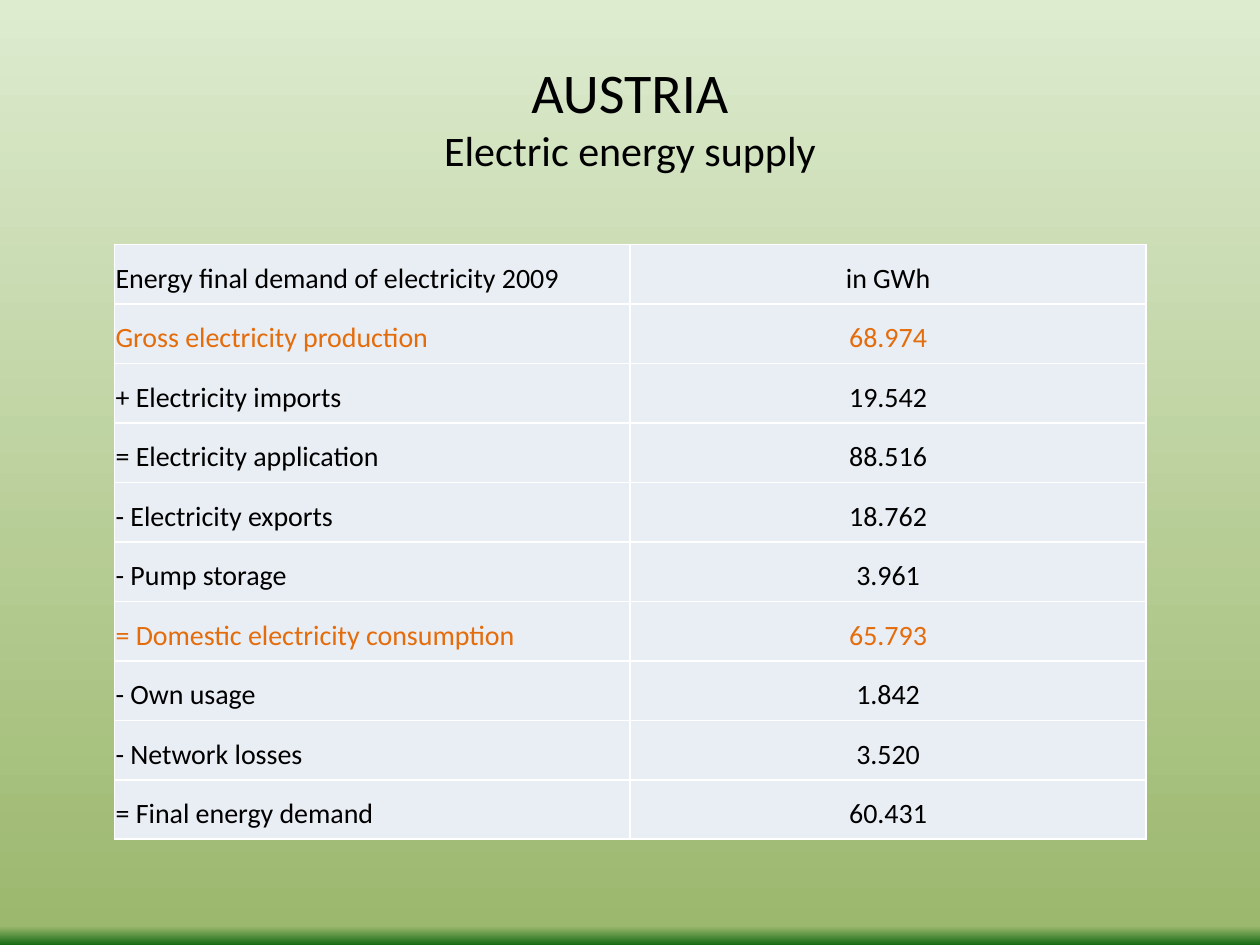
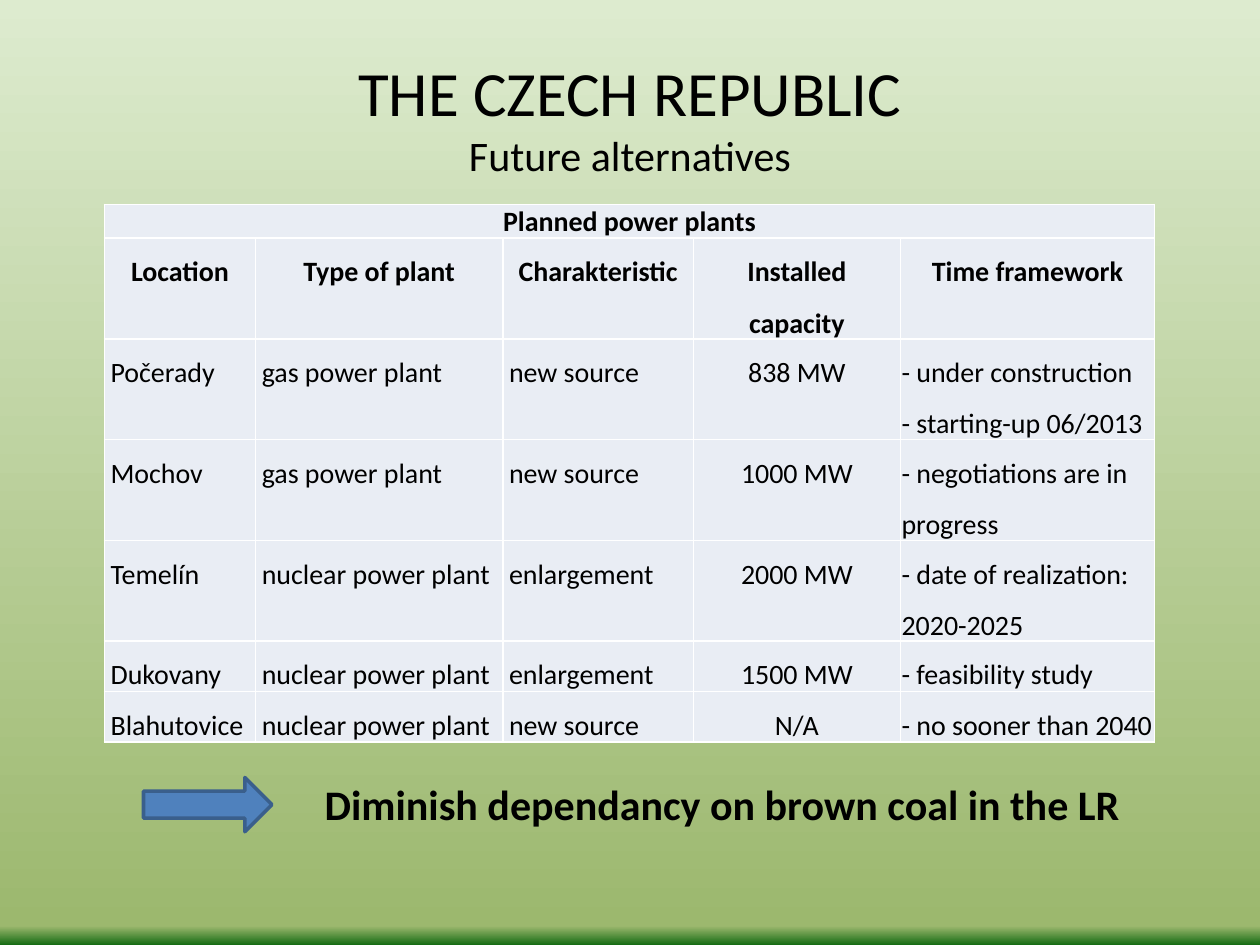
"""Build two slides on electricity supply in Austria and the Czech Republic."""
from copy import deepcopy

from lxml import etree
from pptx import Presentation
from pptx.dml.color import RGBColor
from pptx.enum.shapes import MSO_SHAPE
from pptx.enum.text import MSO_ANCHOR, MSO_AUTO_SIZE, PP_ALIGN
from pptx.oxml.ns import qn
from pptx.util import Pt

LEFT, MID = PP_ALIGN.LEFT, PP_ALIGN.CENTER
MIDDLE = MSO_ANCHOR.MIDDLE
GROW = MSO_AUTO_SIZE.SHAPE_TO_FIT_TEXT
ARROW = MSO_SHAPE.RIGHT_ARROW
FONT = "Calibri"
COLORS = {"text": "000000", "hot": "E46C0A", "cell": "E9EDF4", "rule": "FFFFFF",
          "arrow": "4F81BD", "edge": "3A5F8C"}
FADE = [(0, "DDEBCF"), (0.98, "9CB86E"), (1, "156B13")]
HEAD = (36, 21.6, 648, 90)
SUPPLY = [
    ("Energy final demand of electricity 2009", "in GWh"),
    ("Gross electricity production", "68.974"),
    ("+ Electricity imports", "19.542"),
    ("= Electricity application", "88.516"),
    ("- Electricity exports", "18.762"),
    ("- Pump storage", "3.961"),
    ("= Domestic electricity consumption", "65.793"),
    ("- Own usage", "1.842"),
    ("- Network losses", "3.520"),
    ("= Final energy demand", "60.431"),
]
PLANTS = [
    ("Planned power plants", "", "", "", ""),
    ("Location", "Type of plant", "Charakteristic", "Installed capacity",
     "Time framework"),
    ("Počerady", "gas power plant", "new source", "838 MW",
     "- under construction\n- starting-up 06/2013"),
    ("Mochov", "gas power plant", "new source", "1000 MW",
     "- negotiations are in progress"),
    ("Temelín", "nuclear power plant", "enlargement", "2000 MW",
     "- date of realization: 2020-2025"),
    ("Dukovany", "nuclear power plant", "enlargement", "1500 MW",
     "- feasibility study"),
    ("Blahutovice", "nuclear power plant", "new source", "N/A",
     "- no sooner than 2040"),
]


def style(font, size, color="text", bold=False):
    """Set the face, size, colour and weight of a font."""
    font.name, font.size, font.bold = FONT, Pt(size), bold
    font.color.rgb = RGBColor.from_string(COLORS[color])


def text_box(slide, box):
    """Add a wrapping text box and return its frame."""
    frame = slide.shapes.add_textbox(*map(Pt, box)).text_frame
    frame.word_wrap = True
    return frame


def new_slide(deck):
    """Add a blank slide with the green fade behind it."""
    slide = deck.slides.add_slide(deck.slide_layouts[6])
    fill = slide.background.fill
    fill.gradient()
    fill.gradient_angle = 270
    stops = next(slide.background._cSld.iter(qn("a:gsLst")))
    stops.append(deepcopy(stops[-1]))
    for stop, (place, color) in zip(fill.gradient_stops, FADE):
        stop.position = place
        stop.color.rgb = RGBColor.from_string(color)
    return slide


def title(slide, box, name, topic, size):
    """Write the country name with the topic on the line below."""
    frame = text_box(slide, box)
    frame.vertical_anchor = MIDDLE
    para = frame.paragraphs[0]
    para.alignment = MID
    first = para.add_run()
    first.text = name
    style(first.font, size)
    para.add_line_break()
    second = para.add_run()
    second.text = topic
    style(second.font, 24)


def border(cell):
    """Draw a thin white line on all four sides of a cell."""
    props = cell._tc.get_or_add_tcPr()
    for spot, side in enumerate(("lnL", "lnR", "lnT", "lnB")):
        line = etree.Element(qn("a:" + side), w=str(Pt(1)))
        fill = etree.SubElement(line, qn("a:solidFill"))
        etree.SubElement(fill, qn("a:srgbClr"), val=COLORS["rule"])
        props.insert(spot, line)


def fill_cell(cell, text, align, inset, color="text", bold=False):
    """Put styled text, fill and borders into one cell."""
    cell.text = text
    cell.margin_left = cell.margin_right = Pt(inset)
    cell.margin_top = cell.margin_bottom = 0
    cell.fill.solid()
    cell.fill.fore_color.rgb = RGBColor.from_string(COLORS["cell"])
    border(cell)
    for para in cell.text_frame.paragraphs:
        para.alignment, para.line_spacing = align, 1.5
        style(para.font, 16, color, bold)


def grid(slide, spot, rows, widths, heights, aligns, insets, heads=0, hot=()):
    """Add a table at a spot, with bold centred head rows and hot rows."""
    size = sum(widths), sum(heights)
    table = slide.shapes.add_table(len(rows), len(widths),
                                   *map(Pt, spot + size)).table
    table.first_row = table.horz_banding = False
    for col, width in zip(table.columns, widths):
        col.width = Pt(width)
    for r, (row, height) in enumerate(zip(rows, heights)):
        table.rows[r].height = Pt(height)
        head = r < heads
        for c, text in enumerate(row):
            fill_cell(table.cell(r, c), text, MID if head else aligns[c],
                      insets[c], "hot" if r in hot else "text", head)
    return table


def span_head(table):
    """Merge the top row into one tight heading."""
    cell = table.cell(0, 0)
    cell.merge(table.cell(0, len(table.columns) - 1))
    cell.margin_left = cell.margin_right = Pt(0.75)
    para = cell.text_frame.paragraphs[0]
    para.line_spacing = 1.0
    para.space_before, para.space_after = Pt(2), Pt(6)


def result(slide, box, text):
    """Place an arrow and the bold conclusion beside it."""
    x, y, wide, high = box
    arrow = slide.shapes.add_shape(ARROW, Pt(x), Pt(y + 2.9), Pt(73.4), Pt(31))
    arrow.shadow.inherit = False
    arrow.fill.solid()
    arrow.fill.fore_color.rgb = RGBColor.from_string(COLORS["arrow"])
    arrow.line.color.rgb = RGBColor.from_string(COLORS["edge"])
    arrow.line.width = Pt(2)
    frame = text_box(slide, (x + 96.5, y, wide - 96.5, high))
    frame.auto_size = GROW
    para = frame.paragraphs[0]
    para.text = text
    style(para.font, 24, bold=True)


def austria(deck):
    """Build the slide on supply in Austria."""
    slide = new_slide(deck)
    title(slide, HEAD, "AUSTRIA", "Electric energy supply", 32)
    grid(slide, (65.3, 139.7), SUPPLY, [294.8] * 2, [34] * len(SUPPLY),
         (LEFT, MID), [0.75] * 2, hot=(1, 6))


def czechia(deck):
    """Build the slide on planned plants in the Czech Republic."""
    slide = new_slide(deck)
    title(slide, HEAD, "THE CZECH REPUBLIC", "Future alternatives", 36)
    table = grid(slide, (59.6, 116.8), PLANTS, (86.4, 141.3, 109, 118.2, 145.4),
                 (18, 24.5, 52, 52, 52, 24.5, 24.5),
                 (LEFT, LEFT, LEFT, MID, LEFT), [3.6] * 4 + [0.75], heads=2)
    span_head(table)
    result(slide, (82, 441.4, 595.5, 36),
           "Diminish dependancy on brown coal in the LR")


def main():
    """Build the deck and save it."""
    deck = Presentation()
    deck.slide_width, deck.slide_height = Pt(720), Pt(540)
    austria(deck)
    czechia(deck)
    deck.save("out.pptx")


if __name__ == "__main__":
    main()
